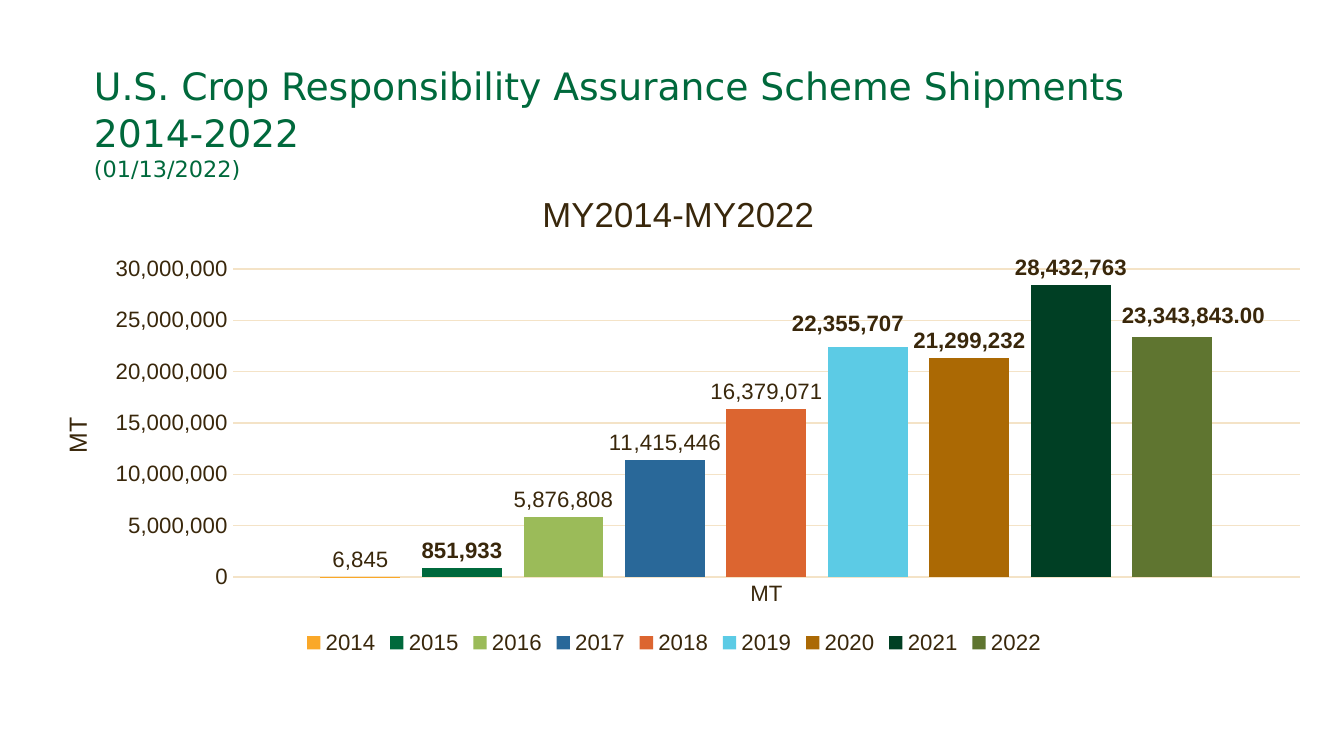
from lxml.etree import SubElement
from pptx import Presentation
from pptx.chart.data import CategoryChartData
from pptx.dml.color import RGBColor
from pptx.enum.chart import XL_CHART_TYPE, XL_LABEL_POSITION, XL_LEGEND_POSITION, XL_TICK_MARK
from pptx.enum.text import MSO_ANCHOR
from pptx.oxml import parse_xml
from pptx.oxml.ns import nsdecls, qn
from pptx.util import Emu, Pt

GREEN, BROWN, SAND = "00693C", "39270B", "F4E3C7"
WHOLE, DECIMAL = "#,##0", "#,##0.00"
CHART_BOX = (23, 171, 1302, 489)
SHIPMENTS = [
    ("2014", 6845, "FAA829", False, WHOLE),
    ("2015", 851933, GREEN, True, WHOLE),
    ("2016", 5876808, "9BBB59", False, WHOLE),
    ("2017", 11415446, "296899", False, WHOLE),
    ("2018", 16379071, "DC6530", False, WHOLE),
    ("2019", 22355707, "5CCBE5", True, WHOLE),
    ("2020", 21299232, "AB6904", True, WHOLE),
    ("2021", 28432763, "003F24", True, WHOLE),
    ("2022", 23343843, "5F7530", True, DECIMAL),
]
LABEL_SHIFTS = {"2019": (-20, -6), "2022": (21, -4)}


def px(length):
    """Turn pixels into EMU."""
    return Emu(round(length * 914400 / 134.4))


def color(value):
    """Return the colour for a hex string."""
    return RGBColor.from_string(value)


def style_font(font, size, name="Arial", value=BROWN, bold=False):
    """Set the look of a font."""
    font.size, font.name, font.bold = Pt(size), name, bold
    font.color.rgb = color(value)


def style_line(line, value):
    """Give a chart line its colour and width."""
    line.color.rgb = color(value)
    line.width = Pt(0.75)


def make_layout(x, y, width=None, height=None):
    """Build a manual chart layout from lengths in pixels."""
    layout = parse_xml(f"<c:layout {nsdecls('c')}/>")
    manual = SubElement(layout, qn("c:manualLayout"))
    if width:
        SubElement(manual, qn("c:layoutTarget"), val="inner")
    if x > 0 and y > 0:
        for mode in ("xMode", "yMode"):
            SubElement(manual, qn(f"c:{mode}"), val="edge")
    for tag, length, whole in (("x", x, CHART_BOX[2]), ("y", y, CHART_BOX[3]),
                               ("w", width, CHART_BOX[2]), ("h", height, CHART_BOX[3])):
        if length is not None:
            SubElement(manual, qn(f"c:{tag}"), val=f"{length / whole:.4f}")
    return layout


def place_title(title, text, size, x, y):
    """Write a chart or axis title and place it."""
    run = title.text_frame.paragraphs[0].add_run()
    run.text = text
    style_font(run.font, size)
    element = title._element
    for old in element.findall(qn("c:layout")):
        element.remove(old)
    element.find(qn("c:tx")).addnext(make_layout(x, y))


def add_heading(slide):
    """Add the heading with its date line."""
    box = slide.shapes.add_textbox(px(75), px(50), px(1098), px(144))
    frame = box.text_frame
    frame.word_wrap = True
    frame.vertical_anchor = MSO_ANCHOR.MIDDLE
    frame.margin_left = frame.margin_right = px(19)
    frame.margin_top = frame.margin_bottom = px(9)
    lines = [("U.S. Crop Responsibility Assurance Scheme Shipments", 20.2, 0),
             ("2014-2022", 20.2, 1), ("(01/13/2022)", 12, 0)]
    for index, (text, size, gap) in enumerate(lines):
        paragraph = frame.add_paragraph() if index else frame.paragraphs[0]
        paragraph.space_before = Pt(gap)
        run = paragraph.add_run()
        run.text = text
        style_font(run.font, size, "DejaVu Sans", GREEN)


def style_axes(chart):
    """Style both axes and the grid."""
    for axis in (chart.category_axis, chart.value_axis):
        axis.major_tick_mark = axis.minor_tick_mark = XL_TICK_MARK.NONE
        style_font(axis.tick_labels.font, 11.9)
    style_line(chart.category_axis.format.line, SAND)
    amounts = chart.value_axis
    amounts.minimum_scale, amounts.maximum_scale, amounts.major_unit = 0, 30000000, 5000000
    amounts.tick_labels.number_format = WHOLE
    amounts.tick_labels.number_format_is_linked = False
    amounts.format.line.fill.background()
    style_line(amounts.major_gridlines.format.line, SAND)
    place_title(amounts.axis_title, "MT", 13.3, 34, 242)


def shift_label(label, bold, number_format, shift):
    """Move one value label away from its usual place."""
    style_font(label.font, 11.9, bold=bold)
    label.position = XL_LABEL_POSITION.OUTSIDE_END
    entry = label._get_or_add_dLbl()
    layout = make_layout(*shift)
    entry.find(qn("c:idx")).addnext(layout)
    layout.addnext(parse_xml(
        f'<c:numFmt {nsdecls("c")} formatCode="{number_format}" sourceLinked="0"/>'))


def style_series(series, shipment):
    """Colour one year's bar and label its value."""
    year, _, fill, bold, number_format = shipment
    series.format.fill.solid()
    series.format.fill.fore_color.rgb = color(fill)
    labels = series.data_labels
    labels.show_value = True
    labels.number_format, labels.number_format_is_linked = number_format, False
    labels.position = XL_LABEL_POSITION.OUTSIDE_END
    style_font(labels.font, 11.9, bold=bold)
    if year in LABEL_SHIFTS:
        shift_label(series.points[0].data_label, bold, number_format, LABEL_SHIFTS[year])


def add_shipments_chart(slide):
    """Add the column chart of shipments by year."""
    data = CategoryChartData()
    data.categories = ["MT"]
    for year, amount, _, _, number_format in SHIPMENTS:
        data.add_series(year, [amount], number_format)
    chart = slide.shapes.add_chart(
        XL_CHART_TYPE.COLUMN_CLUSTERED, *map(px, CHART_BOX), data).chart
    style_font(chart.font, 10)
    place_title(chart.chart_title, "MY2014-MY2022", 18.6, 513, 14)
    chart.has_legend = True
    chart.legend.position = XL_LEGEND_POSITION.BOTTOM
    chart.legend.include_in_layout = False
    style_font(chart.legend.font, 11.9)
    style_axes(chart)
    plot = chart.plots[0]
    plot.gap_width, plot.overlap, plot.vary_by_categories = 219, -27, False
    for series, shipment in zip(plot.series, SHIPMENTS):
        style_series(series, shipment)
    area = chart._chartSpace.chart.plotArea
    for old in area.findall(qn("c:layout")):
        area.remove(old)
    area.insert(0, make_layout(210, 98, 1067, 308))


def main():
    """Build and save the slide."""
    deck = Presentation()
    deck.slide_width, deck.slide_height = px(1344), px(756)
    slide = deck.slides.add_slide(deck.slide_layouts[6])
    add_heading(slide)
    add_shipments_chart(slide)
    deck.save("out.pptx")


if __name__ == "__main__":
    main()
